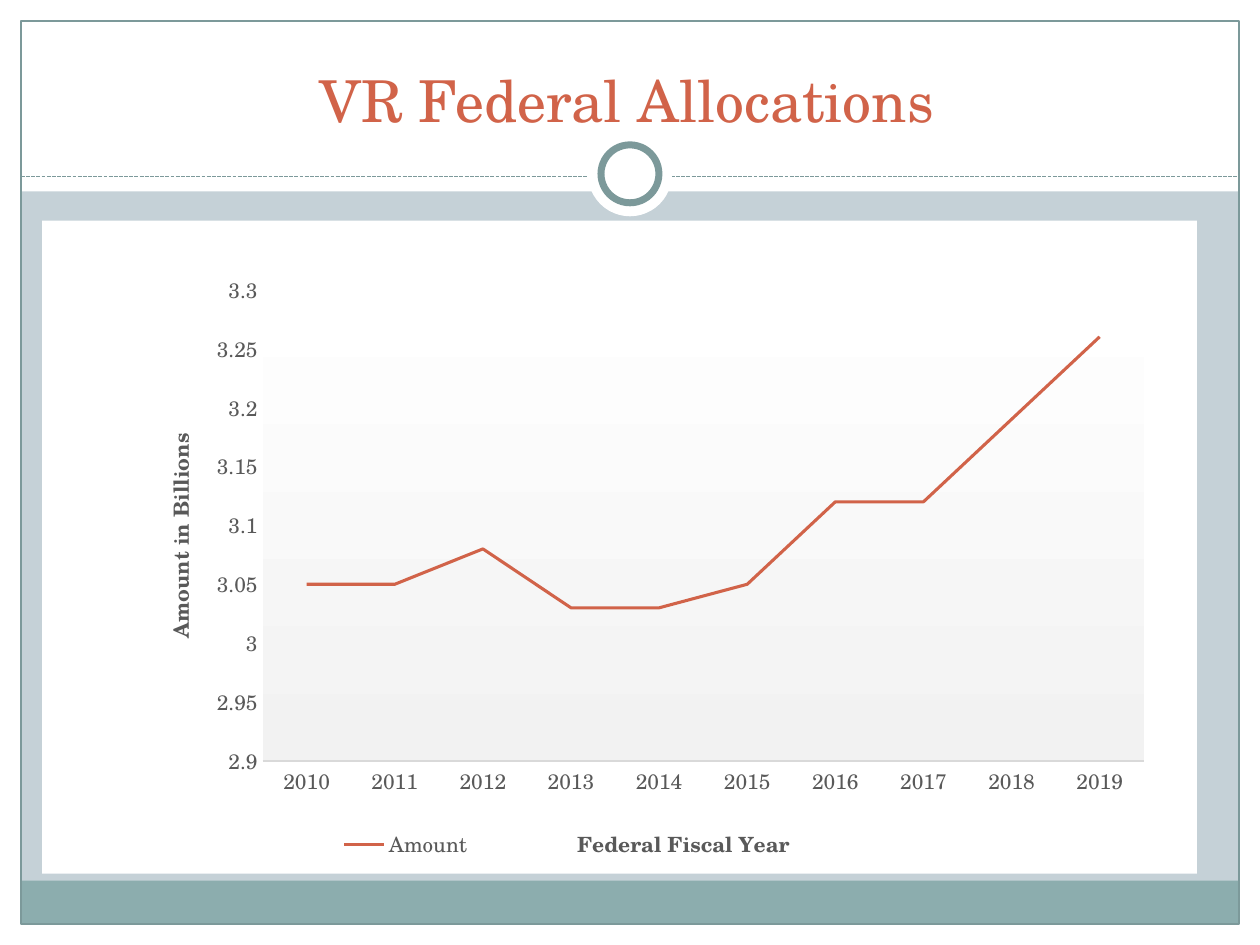
from lxml.etree import fromstring
from pptx import Presentation
from pptx.chart.data import CategoryChartData
from pptx.dml.color import RGBColor
from pptx.enum.chart import (XL_CHART_TYPE, XL_LEGEND_POSITION,
                             XL_MARKER_STYLE, XL_TICK_MARK)
from pptx.enum.dml import MSO_LINE
from pptx.enum.shapes import MSO_CONNECTOR, MSO_SHAPE
from pptx.enum.text import MSO_ANCHOR, PP_ALIGN
from pptx.oxml.ns import qn
from pptx.util import Inches, Pt

WHITE = RGBColor(0xFF, 0xFF, 0xFF)
MIST = RGBColor(0xC5, 0xD1, 0xD7)
TEAL = RGBColor(0x8C, 0xAD, 0xAE)
EDGE = RGBColor(0x7C, 0x99, 0x9A)
RUST = RGBColor(0xD1, 0x63, 0x49)
GREY = RGBColor(0x59, 0x59, 0x59)
PALE = RGBColor(0xD9, 0xD9, 0xD9)
FONT = "TeX Gyre Schola"
COLS, ROWS = 60, 45
CELL = Inches(10) / COLS

NS = ('xmlns:c="http://schemas.openxmlformats.org/drawingml/2006/chart" '
      'xmlns:a="http://schemas.openxmlformats.org/drawingml/2006/main"')
WHITE_FILL = f'<c:spPr {NS}><a:solidFill><a:srgbClr val="{WHITE}"/></a:solidFill><a:ln><a:noFill/></a:ln></c:spPr>'
FADE_FILL = (f'<c:spPr {NS}><a:gradFill><a:gsLst>'
             f'<a:gs pos="0"><a:srgbClr val="{WHITE}"/></a:gs>'
             '<a:gs pos="100000"><a:srgbClr val="F2F2F2"/></a:gs>'
             '</a:gsLst><a:lin ang="5400000" scaled="0"/></a:gradFill></c:spPr>')

YEARS = [str(year) for year in range(2010, 2020)]
AMOUNTS = [3.05, 3.05, 3.08, 3.03, 3.03, 3.05, 3.12, 3.12, 3.19, 3.26]


def style(font, size=12, color=GREY, bold=False):
    font.name, font.size, font.bold = FONT, Pt(size), bold
    font.color.rgb = color


def write(frame, text, align=PP_ALIGN.CENTER, **look):
    para = frame.paragraphs[0]
    para.alignment = align
    run = para.add_run()
    run.text = text
    style(run.font, **look)


def place(node, after, x, y, w=None, h=None, inner=False):
    """Set a chart part's layout, as shares of the chart."""
    old = node.find(qn("c:layout"))
    if old is not None:
        node.remove(old)
    tags = '<c:layoutTarget val="inner"/>' if inner else ""
    tags += '<c:xMode val="edge"/><c:yMode val="edge"/>'
    for tag, share in zip("xywh", (x, y, w, h)):
        if share is not None:
            tags += f'<c:{tag} val="{share}"/>'
    layout = fromstring(f"<c:layout {NS}><c:manualLayout>{tags}</c:manualLayout></c:layout>")
    if after:
        node.find(qn(after)).addnext(layout)
    else:
        node.insert(0, layout)


class Deck:
    def __init__(self):
        self.file = Presentation()
        self.file.slide_width = int(COLS * CELL)
        self.file.slide_height = int(ROWS * CELL)
        self.slide = self.file.slides.add_slide(self.file.slide_layouts[5])
        self.shapes = self.slide.shapes
        back = self.slide.background.fill
        back.solid()
        back.fore_color.rgb = MIST

    def span(self, *cells):
        return [round(cell * CELL) for cell in cells]

    def shape(self, kind, *cells, fill=None, line=None, width=0.75):
        item = self.shapes.add_shape(kind, *self.span(*cells))
        item.shadow.inherit = False
        if fill is None:
            item.fill.background()
        else:
            item.fill.solid()
            item.fill.fore_color.rgb = fill
        if line is None:
            item.line.fill.background()
        else:
            item.line.color.rgb = line
            item.line.width = Pt(width)

    def dash(self, *ends):
        item = self.shapes.add_connector(MSO_CONNECTOR.STRAIGHT, *self.span(*ends))
        item.line.color.rgb = EDGE
        item.line.width = Pt(0.75)
        item.line.dash_style = MSO_LINE.SQUARE_DOT
        props = item.element.find(qn("p:spPr"))
        props.append(props.makeelement(qn("a:effectLst")))

    def title(self, text, *cells):
        item = self.shapes.title
        item.left, item.top, item.width, item.height = self.span(*cells)
        item.text_frame.vertical_anchor = MSO_ANCHOR.BOTTOM
        write(item.text_frame, text, size=33, color=RUST)
        # Bring the title in front of the frame
        self.shapes.element.append(item.element)

    def axis(self, axis, name):
        axis.has_major_gridlines = False
        axis.major_tick_mark = axis.minor_tick_mark = XL_TICK_MARK.NONE
        style(axis.tick_labels.font)
        axis.has_title = True
        write(axis.axis_title.text_frame, name, bold=True)

    def chart(self, *cells):
        data = CategoryChartData()
        data.categories = YEARS
        data.add_series("Amount", AMOUNTS)
        chart = self.shapes.add_chart(XL_CHART_TYPE.LINE, *self.span(*cells), data).chart
        chart.has_title = False
        style(chart.font, size=10, color=RGBColor(0, 0, 0))

        # Axes
        years, sums = chart.category_axis, chart.value_axis
        self.axis(years, "Federal Fiscal Year")
        years.format.line.color.rgb = PALE
        years.format.line.width = Pt(0.75)
        self.axis(sums, "Amount in Billions")
        sums.format.line.fill.background()
        sums.minimum_scale, sums.maximum_scale, sums.major_unit = 2.9, 3.3, 0.05
        sums.tick_labels.number_format = "General"
        sums.tick_labels.number_format_is_linked = False

        # Series and legend
        chart.plots[0].vary_by_categories = False
        series = chart.plots[0].series[0]
        series.smooth = False
        series.marker.style = XL_MARKER_STYLE.NONE
        series.format.line.color.rgb = RUST
        series.format.line.width = Pt(1.75)
        chart.has_legend = True
        chart.legend.position = XL_LEGEND_POSITION.BOTTOM
        chart.legend.include_in_layout = False
        style(chart.legend.font)

        # Layout and fills
        body = chart.element.find(qn("c:chart"))
        plot = body.find(qn("c:plotArea"))
        place(plot, None, 0.191, 0.106, 0.763, 0.722, inner=True)
        place(body.find(qn("c:legend")), "c:legendPos", 0.25, 0.93, 0.13, 0.05)
        place(years.axis_title.element, "c:tx", 0.46, 0.92)
        place(sums.axis_title.element, "c:tx", 0.1, 0.32)
        plot.append(fromstring(FADE_FILL))
        body.addnext(fromstring(WHITE_FILL))


def main():
    deck = Deck()
    rect, oval = MSO_SHAPE.RECTANGLE, MSO_SHAPE.OVAL

    # White margins and header
    for cells in ((0, ROWS - 1, COLS, 1), (0, 0, COLS, 9.12),
                  (0, 0, 1, ROWS), (COLS - 1, 0, 1, ROWS)):
        deck.shape(rect, *cells, fill=WHITE)

    # Footer band, frame and divider
    deck.shape(rect, 1, 41.94, COLS - 2, 2.06, fill=TEAL)
    deck.shape(rect, 1, 1, COLS - 2, ROWS - 2, line=EDGE)
    deck.dash(1, 8.4, COLS - 1, 8.4)

    # Ring on the divider
    deck.shape(oval, 28, 6.3, 4, 4, fill=WHITE)
    deck.shape(oval, 28.62, 6.9, 2.76, 2.76, fill=WHITE, line=EDGE, width=4)

    # Title and chart
    deck.title("VR Federal Allocations", 4, -2, 51.7, 8.7)
    deck.chart(2, 10.5, 55, 31.1)
    deck.file.save("out.pptx")


if __name__ == "__main__":
    main()
